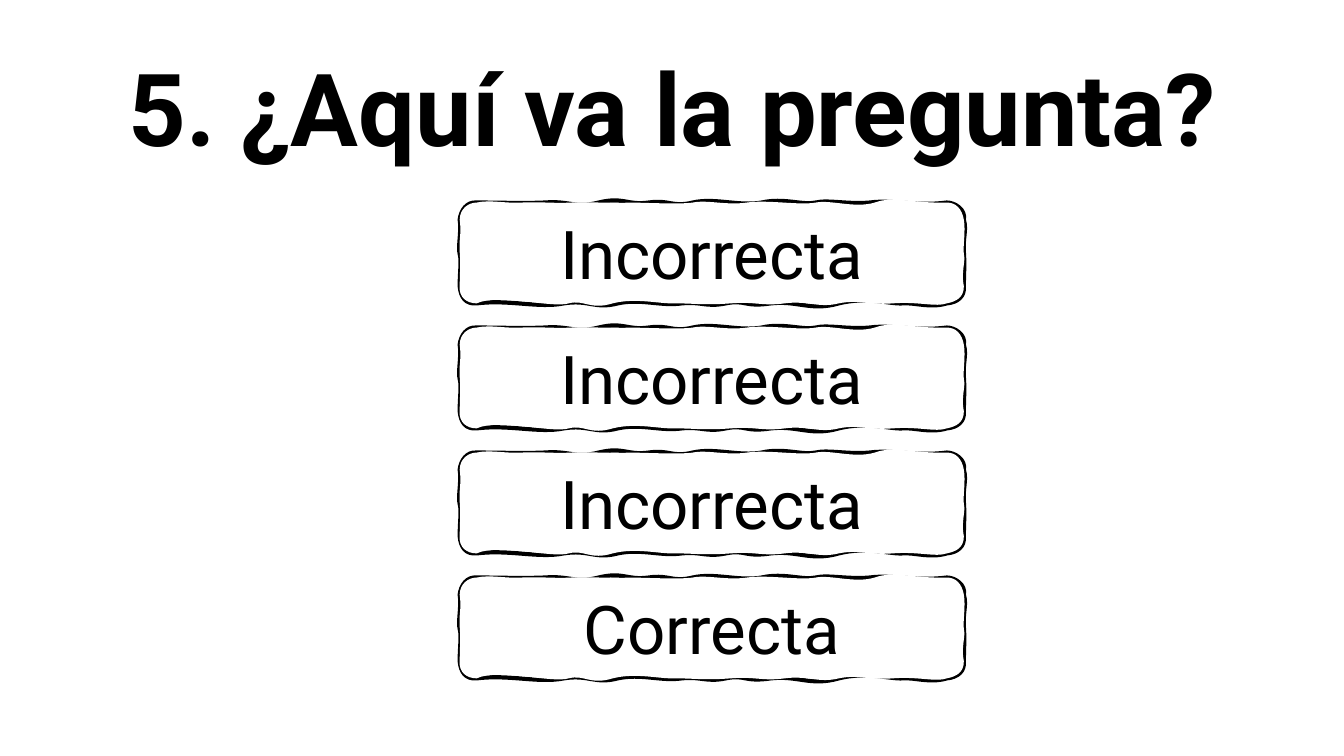
from lxml.etree import SubElement
from pptx import Presentation
from pptx.dml.color import RGBColor
from pptx.enum.text import MSO_ANCHOR as Anchor, PP_ALIGN as Align
from pptx.oxml.ns import qn
from pptx.util import Inches, Pt

TITLE = "5. ¿Aquí va la pregunta?"
ANSWERS = ["Incorrecta", "Incorrecta", "Incorrecta", "Correcta"]
BOX_WIDTH, BOX_HEIGHT, BOX_STEP = 5.04, 1, 1.24
UNITS = 100

STROKE_CURVES = """
1 8 7 -1 17 0, 45 0 60 1 85 0, 110 -2 115 6 139 0, 164 -6 167 3 189 0,
210 -3 212 5 233 0, 255 -5 279 4 302 0, 324 -5 343 3 356 0, 368 -3 388 2 410 0,
432 -3 456 4 487 0, 495 0 506 7 504 17, 507 28 503 34 504 49, 505 64 504 68 504 83,
505 93 498 99 487 100, 470 105 455 99 443 100, 431 101 407 93 379 100,
351 108 338 97 311 100, 284 104 286 96 266 100, 246 104 242 98 222 100,
201 103 181 95 158 100, 135 106 129 96 104 100, 79 105 50 96 17 100,
6 101 1 94 0 83, 0 68 2 58 0 51, -2 44 2 28 0 17"""
FILL_CURVES = """
0 6 9 0 17 0, 31 -3 45 1 62 0, 79 -1 96 1 111 0, 126 -1 156 1 170 0,
183 0 220 2 233 0, 247 -3 267 3 287 0, 308 -3 340 3 356 0, 371 -3 395 6 415 0,
434 -7 453 1 487 0, 496 0 502 6 504 17, 506 28 503 44 504 51, 506 59 501 69 504 83,
504 94 497 98 487 100, 476 104 459 98 433 100, 407 102 399 96 379 100,
359 105 348 97 325 100, 302 103 296 98 271 100, 246 102 233 100 217 100,
200 101 177 94 153 100, 130 107 125 96 109 100, 93 105 38 90 17 100,
7 100 -1 94 0 83, 0 70 1 62 0 49, -1 35 2 33 0 17"""


def color(value):
    """Turn a hex string into a colour."""
    return RGBColor.from_string(value)


def write_text(box, text, spacing=None, **formats):
    """Write one centred paragraph in the middle of a box."""
    frame = box.text_frame
    frame.word_wrap = True
    frame.vertical_anchor = Anchor.MIDDLE
    para = frame.paragraphs[0]
    para.alignment = Align.CENTER
    para.line_spacing = spacing
    span = para.add_run()
    span.text = text
    for name, value in {"name": "Roboto", **formats}.items():
        setattr(span.font, name, value)
    span.font.color.rgb = color("000000")


def add_point(parent, x, y):
    """Append a path point."""
    SubElement(parent, qn("a:pt"), x=str(x), y=str(y))


def add_curves(path_list, curves, **options):
    """Append a closed path of cubic curves that starts on the left edge."""
    size = {"w": str(round(BOX_WIDTH * UNITS)), "h": str(BOX_HEIGHT * UNITS)}
    outline = SubElement(path_list, qn("a:path"), **size, **options)
    add_point(SubElement(outline, qn("a:moveTo")), 0, 17)
    for curve in curves.split(","):
        numbers = curve.split()
        bezier = SubElement(outline, qn("a:cubicBezTo"))
        for x, y in zip(numbers[::2], numbers[1::2]):
            add_point(bezier, x, y)
    SubElement(outline, qn("a:close"))


def add_sketch_box(page, left, top, width, height):
    """Add a white box with a hand-drawn black edge."""
    builder = page.shapes.build_freeform(scale=Inches(1))
    builder.add_line_segments([(width, 0), (width, height), (0, height)])
    box = builder.convert_to_shape(Inches(left), Inches(top))
    path_list = box._element.spPr.find(".//" + qn("a:pathLst"))
    path_list.clear()
    add_curves(path_list, STROKE_CURVES, fill="none")
    add_curves(path_list, FILL_CURVES, stroke="0")
    box.shadow.inherit = False
    box.fill.solid()
    box.fill.fore_color.rgb = color("FFFFFF")
    box.line.color.rgb = color("000000")
    box.line.width = Pt(3)
    return box


def add_question(page, left, top, width, height):
    """Add the question heading."""
    box = page.shapes.add_textbox(*map(Inches, (left, top, width, height)))
    write_text(box, TITLE, spacing=0.9, size=Pt(72), bold=True)


def add_answers(page, left, top):
    """Stack the answer boxes at equal steps."""
    for row, answer in enumerate(ANSWERS):
        box = add_sketch_box(page, left, top + row * BOX_STEP, BOX_WIDTH, BOX_HEIGHT)
        write_text(box, answer, size=Pt(48))


def main():
    """Build and save the quiz slide."""
    deck = Presentation()
    deck.slide_width, deck.slide_height = Inches(13.33), Inches(7.5)
    page = deck.slides.add_slide(deck.slide_layouts[6])
    add_question(page, 0.92, 0.4, 11.5, 1.45)
    add_answers(page, 4.56, 2.01)
    deck.save("out.pptx")


if __name__ == "__main__":
    main()
